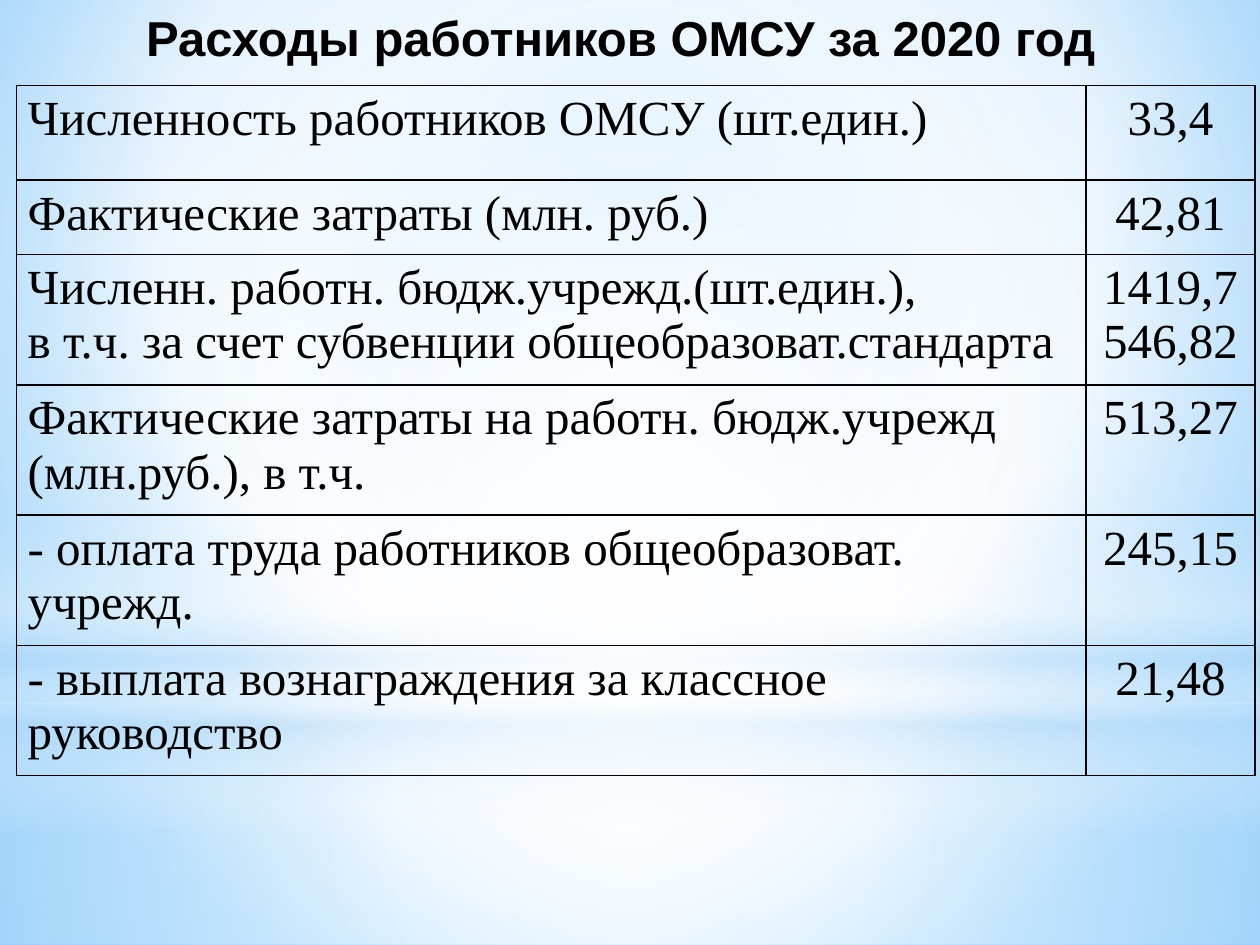
from dataclasses import dataclass

from lxml.etree import SubElement
from pptx import Presentation
from pptx.dml.color import RGBColor
from pptx.enum.shapes import MSO_SHAPE
from pptx.enum.text import MSO_ANCHOR, PP_ALIGN
from pptx.oxml.ns import qn
from pptx.util import Inches, Pt

BLACK = RGBColor(0x00, 0x00, 0x00)
WHITE = RGBColor(0xFF, 0xFF, 0xFF)
PALE = RGBColor(0xB4, 0xDC, 0xFA)
SKY = RGBColor(0x9E, 0xD5, 0xFF)
BLUE = RGBColor(0x5B, 0xB9, 0xFF)


@dataclass
class Stop:
    pos: int
    color: RGBColor
    alpha: int = 100


@dataclass
class Glow:
    kind: MSO_SHAPE
    top: float
    height: float
    stops: list[Stop]
    radial: bool = True


@dataclass
class Row:
    height: float
    label: list[str]
    value: list[str]


CENTER = (50, 50, 50, 50)
BACKGROUND = [Stop(0, SKY), Stop(60, WHITE), Stop(100, BLUE)]
GLOWS = [
    Glow(MSO_SHAPE.RECTANGLE, 5.58, 1.92,
         [Stop(0, WHITE, 91), Stop(37, WHITE, 76), Stop(100, PALE, 79)]),
    Glow(MSO_SHAPE.RECTANGLE, 0, 5.58,
         [Stop(0, WHITE, 89), Stop(48, WHITE, 62), Stop(100, PALE, 79)]),
    Glow(MSO_SHAPE.RECTANGLE, 4.12, 2.5,
         [Stop(0, WHITE, 0), Stop(29, WHITE, 30), Stop(45, PALE, 40),
          Stop(55, WHITE, 26), Stop(65, PALE, 60), Stop(100, WHITE, 0)], radial=False),
    Glow(MSO_SHAPE.OVAL, 1.75, 5.58, [Stop(0, WHITE), Stop(56, WHITE, 0)]),
]
ROWS = [
    Row(0.75, ["Численность работников ОМСУ (шт.един.)"], ["33,4"]),
    Row(0.59, ["Фактические затраты (млн. руб.)"], ["42,81"]),
    Row(1.02, ["Численн. работн. бюдж.учрежд.(шт.един.),",
               "в т.ч. за счет субвенции общеобразоват.стандарта"], ["1419,7", "546,82"]),
    Row(0.97, ["Фактические затраты на работн. бюдж.учрежд (млн.руб.), в т.ч."], ["513,27"]),
    Row(0.97, ["- оплата труда работников общеобразоват. учрежд."], ["245,15"]),
    Row(0.97, ["- выплата вознаграждения за классное руководство"], ["21,48"]),
]
COLUMNS = [8.49, 1.34]


def set_gradient(parent, stops: list[Stop], focus: tuple | None) -> None:
    """Replace the solid fill under parent by a radial or vertical gradient."""
    solid = parent.find(qn("a:solidFill"))
    grad = SubElement(parent, qn("a:gradFill"), rotWithShape="1")
    parent.replace(solid, grad)
    stop_list = SubElement(grad, qn("a:gsLst"))
    for stop in stops:
        gs = SubElement(stop_list, qn("a:gs"), pos=str(stop.pos * 1000))
        color = SubElement(gs, qn("a:srgbClr"), val=str(stop.color))
        if stop.alpha < 100:
            SubElement(color, qn("a:alpha"), val=str(stop.alpha * 1000))
    if focus:
        circle = SubElement(grad, qn("a:path"), {"path": "circle"})
        sides = {side: str(v * 1000) for side, v in zip("ltrb", focus)}
        SubElement(circle, qn("a:fillToRect"), sides)
    else:
        SubElement(grad, qn("a:lin"), ang="5400000", scaled="0")


def add_glow(s, glow: Glow) -> None:
    """Add a full-width translucent gradient shape."""
    sp = s.shapes.add_shape(glow.kind, 0, Inches(glow.top), Inches(10), Inches(glow.height))
    sp.shadow.inherit = False
    sp.line.fill.background()
    sp.fill.solid()
    set_gradient(sp._element.spPr, glow.stops, CENTER if glow.radial else None)


def write(tf, lines: list[str], font: str, align: PP_ALIGN, bold: bool = False) -> None:
    """Write one paragraph per line."""
    for i, line in enumerate(lines):
        p = tf.paragraphs[0] if i == 0 else tf.add_paragraph()
        p.alignment = align
        r = p.add_run()
        r.text = line
        r.font.name = font
        r.font.size = Pt(28)
        r.font.bold = bold
        r.font.color.rgb = BLACK


def set_borders(cell) -> None:
    """Give a cell thin black borders on all sides."""
    props = cell._tc.get_or_add_tcPr()
    for i, side in enumerate("LRTB"):
        line = SubElement(props, qn(f"a:ln{side}"), w=str(Pt(1)))
        fill = SubElement(line, qn("a:solidFill"))
        SubElement(fill, qn("a:srgbClr"), val=str(BLACK))
        props.insert(i, line)


def add_title(s) -> None:
    """Add the slide heading."""
    sp = s.shapes.add_textbox(Inches(0.28), Inches(-0.04), Inches(9.29), Inches(1.72))
    tf = sp.text_frame
    tf.word_wrap = True
    tf.vertical_anchor = MSO_ANCHOR.TOP
    tf.margin_top = Inches(0.1)
    write(tf, ["Расходы работников ОМСУ за 2020 год"], "Arial", PP_ALIGN.CENTER, bold=True)


def add_expenses(s) -> None:
    """Add the table of staff numbers and costs."""
    height = sum(row.height for row in ROWS)
    table = s.shapes.add_table(len(ROWS), len(COLUMNS), Inches(0.13), Inches(0.68),
                               Inches(sum(COLUMNS)), Inches(height)).table
    table.first_row = False
    table.horz_banding = False
    for column, width in zip(table.columns, COLUMNS):
        column.width = Inches(width)
    for i, row in enumerate(ROWS):
        table.rows[i].height = Inches(row.height)
        contents = [(row.label, PP_ALIGN.LEFT), (row.value, PP_ALIGN.CENTER)]
        for j, (lines, align) in enumerate(contents):
            cell = table.cell(i, j)
            cell.margin_left = cell.margin_right = Inches(0.09)
            cell.margin_top = cell.margin_bottom = Inches(0.05)
            cell.fill.background()
            set_borders(cell)
            write(cell.text_frame, lines, "Times New Roman", align)


def main() -> None:
    """Build and save the slide."""
    prs = Presentation()
    prs.slide_width, prs.slide_height = Inches(10), Inches(7.5)
    s = prs.slides.add_slide(prs.slide_layouts[6])
    s.background.fill.solid()
    set_gradient(s._element.find(".//" + qn("p:bgPr")), BACKGROUND, (20, 10, 20, 60))
    for glow in GLOWS:
        add_glow(s, glow)
    add_title(s)
    add_expenses(s)
    prs.save("out.pptx")


if __name__ == "__main__":
    main()
